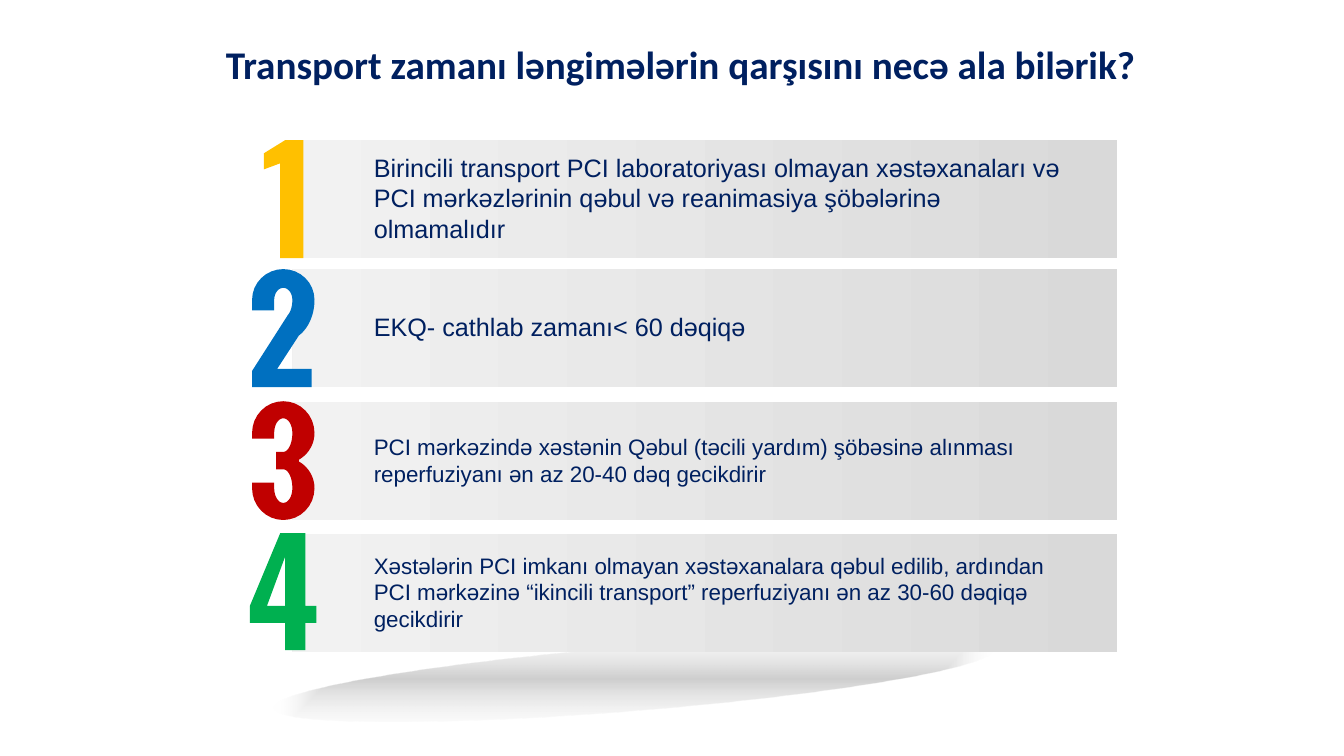
from dataclasses import dataclass
from math import cos, radians, sin

from pptx import Presentation
from pptx.dml.color import RGBColor
from pptx.enum.shapes import MSO_SHAPE as SHAPE
from pptx.enum.text import MSO_ANCHOR as ANCHOR, MSO_AUTO_SIZE as AUTO, PP_ALIGN as ALIGN
from pptx.oxml import parse_xml
from pptx.util import Pt


@dataclass(frozen=True)
class Theme:
    navy: str = "002060"
    bar_dark: str = "D9D9D9"
    bar_light: str = "F2F2F2"
    yellow: str = "FFC000"
    blue: str = "0070C0"
    red: str = "C00000"
    green: str = "00B050"
    shadow: str = "0D0D0D"
    shadow_edge: str = "FFFFFF"
    head_font: str = "Calibri"
    body_font: str = "Arial"
    title: int = 28
    large: int = 18
    small: int = 16


T = Theme()
NS = "http://schemas.openxmlformats.org/drawingml/2006/main"

# Row layout: a digit overlaps the left end of its bar
ROW_X, ROW_W, ROW_H = 178.56, 619.2, 84.24
BAR_INSET = 30.24
TEXT_INSET, TEXT_W, TEXT_LIFT = 81.36, 510.48, 0.9

# Round digits share a centre line, an outer and an inner radius
CENTER_X, OUTER_R, INNER_R = 23.8, 22.3, 6.5
LEFT, RIGHT = CENTER_X - OUTER_R, CENTER_X + OUTER_R
BOWL_Y = 22   # centre of the upper bowl
WAIST = 60    # angle at which the bowl's outer edge ends


def rgb(color):
    return RGBColor.from_string(color)


def arc(ry, rx, start, end, steps=16):
    """Points on an ellipse around the bowl centre; 0 is right, 90 is down."""
    angles = [radians(start + (end - start) * i / steps) for i in range(steps + 1)]
    return [(CENTER_X + rx * cos(a), BOWL_Y + ry * sin(a)) for a in angles]


# Each digit function returns its contours, as points within a box of height h
def digit_one(h):
    stem_l, stem_r, flag_l = 21.6, 38.2, 10
    return [[(stem_l, 16.6), (flag_l, 20.9), (flag_l, 9.4), (25.2, 0),
             (stem_r, 0), (stem_r, h), (stem_l, h)]]


def digit_two(h):
    hook, base_top = 29.5, h - 12.9
    outer = [(LEFT, hook)] + arc(22, OUTER_R, 180, 360) + arc(29.4, OUTER_R, 0, WAIST)
    inner = ([(CENTER_X - INNER_R, hook)] + arc(8.6, INNER_R, 180, 360)
             + arc(12.5, INNER_R, 0, WAIST))
    base = [(19.4, base_top), (RIGHT - 2, base_top), (RIGHT - 2, h), (LEFT, h),
            (LEFT, base_top + 1.4)]
    return [outer + base + inner[::-1]]


def digit_three(h):
    hook, middle, notch_x = 26, h / 2 - 0.4, 18.7
    outer = [(LEFT, hook)] + arc(22.7, OUTER_R, 180, 360) + arc(22, OUTER_R, 0, WAIST)
    inner = ([(CENTER_X - INNER_R, hook)] + arc(10.5, INNER_R, 180, 360)
             + arc(13.5, INNER_R, 0, 90) + [(notch_x, BOWL_Y + 13.5)])

    def mirror(points):
        return [(x, 2 * middle - y) for x, y in points]

    return [outer + mirror(outer[::-1]) + mirror(inner) + inner[::-1]]


def digit_four(h):
    stem_l, stem_r, apex_x, arm_r = 25.2, 39.6, 21.6, 47.5
    arm_top, arm_bottom, top, bottom = 51.1, 63.4, -0.7, h - 1.4
    body = [(stem_l, arm_bottom), (0, arm_bottom), (0, arm_top), (apex_x, top),
            (stem_r, top), (stem_r, arm_top), (arm_r, arm_top), (arm_r, arm_bottom),
            (stem_r, arm_bottom), (stem_r, bottom), (stem_l, bottom)]
    hole = [(stem_l, arm_top), (stem_l, 15.8), (12.2, arm_top)]
    return [body, hole]


# Top, digit, digit colour, text size, text
ROWS = [
    (100.08, digit_one, T.yellow, T.large,
     "Birincili transport PCI laboratoriyası olmayan xəstəxanaları və PCI mərkəzlərinin "
     "qəbul və reanimasiya şöbələrinə olmamalıdır"),
    (192.24, digit_two, T.blue, T.large, "EKQ- cathlab zamanı< 60 dəqiqə"),
    (287.28, digit_three, T.red, T.small,
     "PCI mərkəzində xəstənin Qəbul (təcili yardım) şöbəsinə alınması "
     "reperfuziyanı ən az 20-40 dəq gecikdirir"),
    (381.6, digit_four, T.green, T.small,
     "Xəstələrin PCI imkanı olmayan xəstəxanalara qəbul edilib, ardından PCI mərkəzinə "
     "“ikincili transport” reperfuziyanı ən az 30-60 dəqiqə gecikdirir"),
]


def write(tf, text, size, font=T.body_font, color=T.navy, bold=False, anchor=ANCHOR.MIDDLE):
    tf.word_wrap = True
    tf.auto_size = AUTO.NONE
    tf.vertical_anchor = anchor
    p = tf.paragraphs[0]
    p.alignment = ALIGN.LEFT
    r = p.add_run()
    r.text = text
    r.font.size, r.font.name, r.font.bold = Pt(size), font, bold
    r.font.color.rgb = rgb(color)


def plain(sp):
    sp.shadow.inherit = False
    sp.line.fill.background()


def add_title(s, x, y, w, h):
    sp = s.shapes.title
    sp.left, sp.top, sp.width, sp.height = Pt(x), Pt(y), Pt(w), Pt(h)
    write(sp.text_frame, "Transport zamanı ləngimələrin qarşısını necə ala bilərik?",
          T.title, font=T.head_font, bold=True, anchor=ANCHOR.TOP)


def add_floor_shadow(s, x, y, w, h):
    sp = s.shapes.add_shape(SHAPE.OVAL, Pt(x), Pt(y), Pt(w), Pt(h))
    plain(sp)
    sp.rotation = 355.4
    sp.fill.background()
    stops = "".join(
        f'<a:gs pos="{pos}"><a:srgbClr val="{color}"><a:alpha val="{alpha}"/></a:srgbClr></a:gs>'
        for pos, color, alpha in ((0, T.shadow, 20000), (100000, T.shadow_edge, 0)))
    spPr = sp.element.spPr
    spPr.replace(spPr.find(f"{{{NS}}}noFill"), parse_xml(
        f'<a:gradFill xmlns:a="{NS}" rotWithShape="1"><a:gsLst>{stops}</a:gsLst>'
        '<a:path path="shape"><a:fillToRect l="50000" t="50000" r="50000" b="50000"/>'
        '</a:path></a:gradFill>'))


def add_bar(s, x, y, w, h):
    sp = s.shapes.add_shape(SHAPE.RECTANGLE, Pt(x), Pt(y), Pt(w), Pt(h))
    plain(sp)
    sp.fill.gradient()
    sp.fill.gradient_angle = 180
    for stop, shade in zip(sp.fill.gradient_stops, (T.bar_dark, T.bar_light)):
        stop.color.rgb = rgb(shade)


def add_digit(s, x, y, contours, color):
    body, *holes = [[(Pt(x + px), Pt(y + py)) for px, py in c] for c in contours]
    fb = s.shapes.build_freeform(*body[0])
    fb.add_line_segments(body[1:])
    for hole in holes:
        fb.move_to(*hole[0])
        fb.add_line_segments(hole[1:])
    sp = fb.convert_to_shape()
    plain(sp)
    sp.fill.solid()
    sp.fill.fore_color.rgb = rgb(color)


def add_row(s, x, y, w, h, digit, color, size, text):
    add_bar(s, x + BAR_INSET, y, w - BAR_INSET, h)
    add_digit(s, x, y, digit(h), color)
    box = s.shapes.add_textbox(Pt(x + TEXT_INSET), Pt(y - TEXT_LIFT), Pt(TEXT_W), Pt(h))
    write(box.text_frame, text, size)


def main():
    prs = Presentation()
    prs.slide_width, prs.slide_height = Pt(960), Pt(540)
    s = prs.slides.add_slide(prs.slide_layouts[5])
    add_floor_shadow(s, 194.4, 462.24, 516.24, 45.36)
    for top, *parts in ROWS:
        add_row(s, ROW_X, top, ROW_W, ROW_H, *parts)
    add_title(s, 154.08, 25.2, 680.4, 41.04)
    prs.save("out.pptx")


if __name__ == "__main__":
    main()
